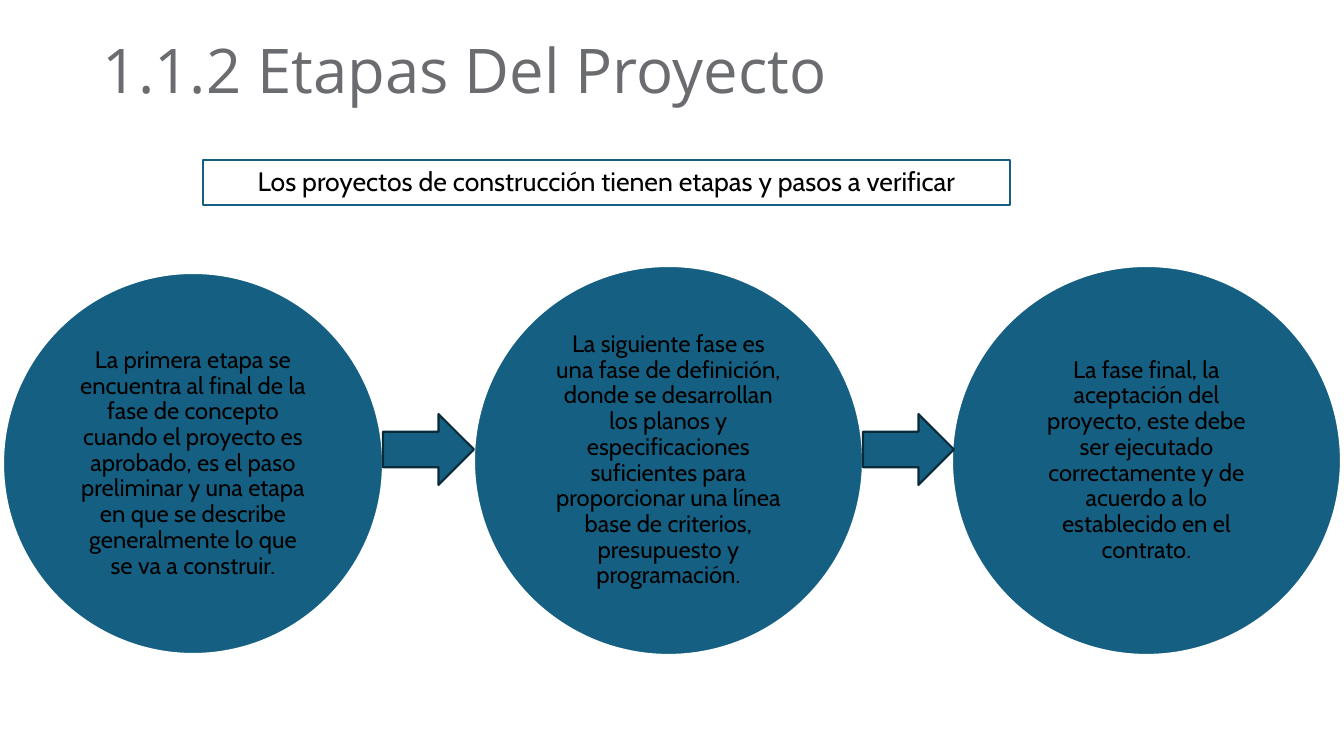
import pptx
import pptx.util
import pptx.dml.color
import pptx.enum.shapes
import pptx.enum.text

RGBColor = pptx.dml.color.RGBColor
MSO_SHAPE = pptx.enum.shapes.MSO_SHAPE
PP_ALIGN = pptx.enum.text.PP_ALIGN
MSO_ANCHOR = pptx.enum.text.MSO_ANCHOR

BLUE = RGBColor(0x15, 0x60, 0x82)
NAVY = RGBColor(0x09, 0x2A, 0x39)
GREY = RGBColor(0x6A, 0x6C, 0x6F)
WHITE = RGBColor(0xFF, 0xFF, 0xFF)
BLACK = RGBColor(0x00, 0x00, 0x00)

EMU_PER_PX = 914400 / 100.8

# Each stage: left, top, width, height, text
STAGES = [
    (3, 273, 380, 381,
     "La primera etapa se encuentra al final de la fase de concepto cuando el "
     "proyecto es aprobado, es el paso preliminar y una etapa en que se "
     "describe generalmente lo que se va a construir."),
    (474, 266, 389, 389,
     "La siguiente fase es una fase de definición, donde se desarrollan los "
     "planos y especificaciones suficientes para proporcionar una línea base "
     "de criterios, presupuesto y programación."),
    (952, 266, 389, 389,
     "La fase final, la aceptación del proyecto, este debe ser ejecutado "
     "correctamente y de acuerdo a lo establecido en el contrato."),
]


def px(n):
    return pptx.util.Emu(round(n * EMU_PER_PX))


def write(tf, text, font, size, color, align, anchor, inset_x, inset_y):
    tf.word_wrap = True
    tf.auto_size = pptx.enum.text.MSO_AUTO_SIZE.NONE
    tf.vertical_anchor = anchor
    tf.margin_left = tf.margin_right = px(inset_x)
    tf.margin_top = tf.margin_bottom = px(inset_y)
    p = tf.paragraphs[0]
    p.alignment = align
    p.line_spacing = 0.9
    r = p.add_run()
    r.text = text
    r.font.name = font
    r.font.size = pptx.util.Pt(size)
    r.font.color.rgb = color


def add_title(slide, text):
    sp = slide.shapes.title
    sp.left, sp.top, sp.width, sp.height = px(93), px(40), px(1159), px(146)
    write(sp.text_frame, text, "Open Sans", 44, GREY,
          PP_ALIGN.LEFT, MSO_ANCHOR.TOP, 10, 0)


def add_figure(slide, kind, left, top, width, height, fill, line):
    sp = slide.shapes.add_shape(kind, px(left), px(top), px(width), px(height))
    sp.shadow.inherit = False
    sp.fill.solid()
    sp.fill.fore_color.rgb = fill
    sp.line.color.rgb = line
    sp.line.width = pptx.util.Pt(1.5)
    return sp


def add_label(sp, text, size, inset_x, inset_y):
    write(sp.text_frame, text, "Cabin", size, BLACK,
          PP_ALIGN.CENTER, MSO_ANCHOR.MIDDLE, inset_x, inset_y)


def main():
    prs = pptx.Presentation()
    prs.slide_width, prs.slide_height = px(1344), px(756)
    slide = prs.slides.add_slide(prs.slide_layouts[5])

    # Title and framed statement
    add_title(slide, "1.1.2 Etapas Del Proyecto")
    frame = add_figure(slide, MSO_SHAPE.RECTANGLE, 203, 160, 807, 45, WHITE, BLUE)
    add_label(frame, "Los proyectos de construcción tienen etapas y pasos a verificar",
              19, 8, 8)

    # Stage circles
    for left, top, width, height, text in STAGES:
        circle = add_figure(slide, MSO_SHAPE.OVAL, left, top, width, height, BLUE, WHITE)
        add_label(circle, text, 17, 21, 2)

    # Arrows from the right edge of each stage to the next
    for left, _, width, _, _ in STAGES[:-1]:
        add_figure(slide, MSO_SHAPE.RIGHT_ARROW, left + width, 414, 91, 71, BLUE, NAVY)

    prs.save("out.pptx")


if __name__ == "__main__":
    main()
